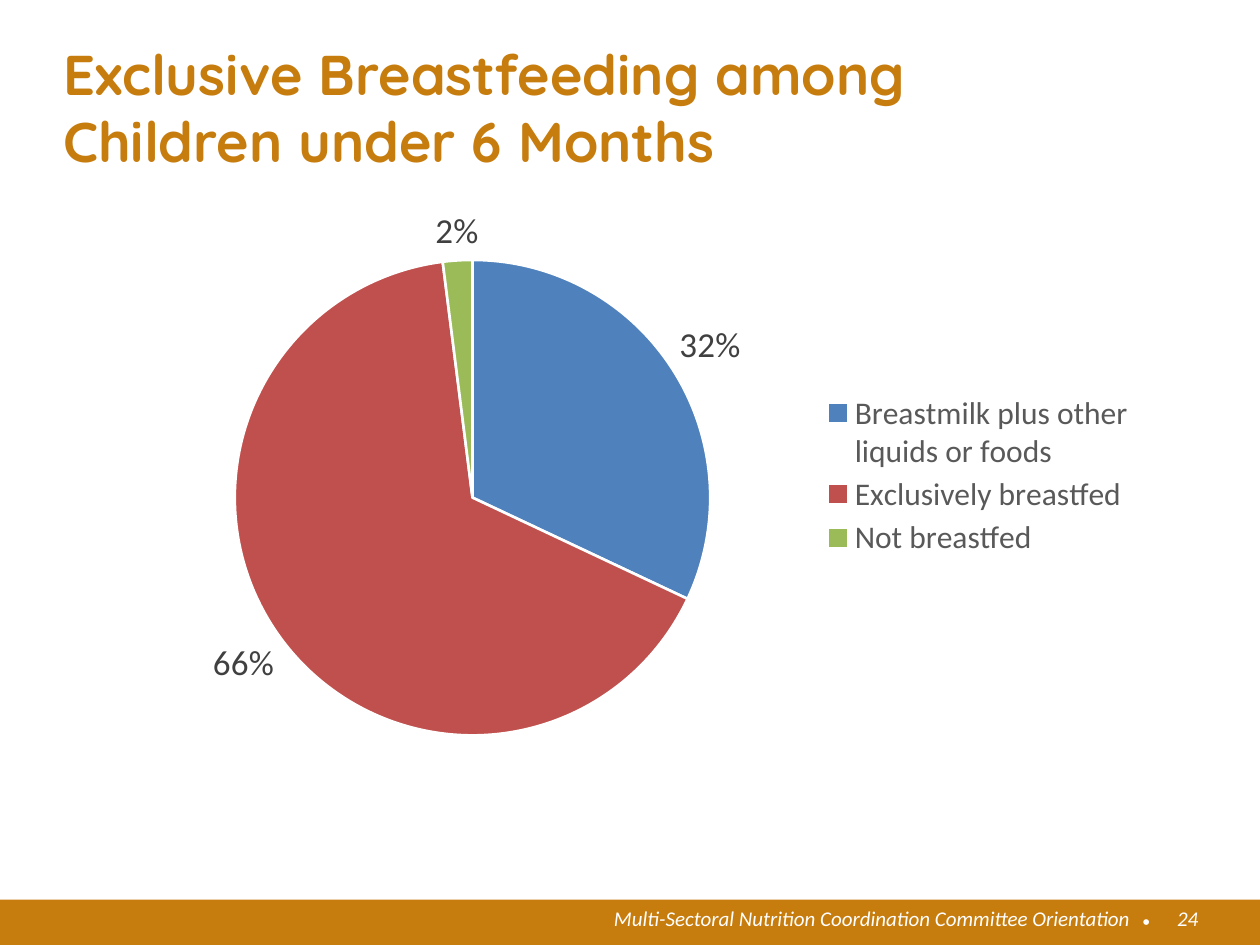
import pptx
import pptx.chart.data
import pptx.dml.color
import pptx.enum.chart
import pptx.enum.shapes
import pptx.enum.text
import pptx.oxml
import pptx.oxml.ns
import pptx.util

Pt = pptx.util.Pt
ALIGN = pptx.enum.text.PP_ALIGN
COLOURS = {
    "ochre": "C77C0E", "white": "FFFFFF", "label": "404040", "legend": "595959",
    "mixed": "4F81BD", "exclusive": "C0504D", "none": "9BBB59",
}
FEEDING = [
    ("Breastmilk plus other liquids or foods", 0.32, "mixed"),
    ("Exclusively breastfed", 0.66, "exclusive"),
    ("Not breastfed", 0.02, "none"),
]


def rgb(name):
    return pptx.dml.color.RGBColor.from_string(COLOURS[name])


def style_font(font, name, size, colour, bold=False, italic=False):
    font.name, font.size = name, Pt(size)
    font.bold, font.italic = bold, italic
    font.color.rgb = rgb(colour)


def fill_frame(frame, text, align, wrap):
    """Put one top-anchored paragraph in a frame without margins."""
    frame.margin_left = frame.margin_right = frame.margin_top = frame.margin_bottom = 0
    frame.auto_size = pptx.enum.text.MSO_AUTO_SIZE.NONE
    frame.vertical_anchor = pptx.enum.text.MSO_ANCHOR.TOP
    frame.word_wrap = wrap
    frame.text = text
    paragraph = frame.paragraphs[0]
    paragraph.alignment = align
    return paragraph


def add_title(page, text):
    title = page.shapes.title
    title.left, title.top, title.width, title.height = Pt(36), Pt(22.3), Pt(648), Pt(57)
    paragraph = fill_frame(title.text_frame, text, ALIGN.LEFT, False)
    style_font(paragraph.font, "Quicksand", 32, "ochre", bold=True)


def set_layout(element, before, left, top, width, height, inner=False):
    """Place a chart part, in fractions of the chart, ahead of its child `before`."""
    for old in element.findall(pptx.oxml.ns.qn("c:layout")):
        element.remove(old)
    target = '<c:layoutTarget val="inner"/>' if inner else ""
    layout = pptx.oxml.parse_xml(
        f'<c:layout {pptx.oxml.ns.nsdecls("c")}><c:manualLayout>{target}'
        '<c:xMode val="edge"/><c:yMode val="edge"/>'
        f'<c:x val="{left}"/><c:y val="{top}"/><c:w val="{width}"/><c:h val="{height}"/>'
        '</c:manualLayout></c:layout>')
    element.find(pptx.oxml.ns.qn(before)).addprevious(layout)


def add_feeding_pie(page):
    data = pptx.chart.data.CategoryChartData(number_format="0%")
    data.categories = [name for name, _, _ in FEEDING]
    data.add_series("Series 1", [share for _, share, _ in FEEDING])
    chart = page.shapes.add_chart(
        pptx.enum.chart.XL_CHART_TYPE.PIE, Pt(76.3), Pt(110.2), Pt(578.2), Pt(319.7), data).chart
    style_font(chart.font, "Calibri", 20, "label")
    chart.has_title = False
    chart.has_legend = True
    chart.legend.position = pptx.enum.chart.XL_LEGEND_POSITION.RIGHT
    chart.legend.include_in_layout = False
    style_font(chart.legend.font, "Calibri", 18, "legend")

    plot = chart.plots[0]
    plot.vary_by_categories = True
    for index, (_, _, colour) in enumerate(FEEDING):
        form = plot.series[0].points[index].format
        form.fill.solid()
        form.fill.fore_color.rgb = rgb(colour)
        form.line.color.rgb = rgb("white")
        form.line.width = Pt(1.5)

    plot.has_data_labels = True
    labels = plot.data_labels
    labels.show_value, labels.show_percentage = True, False
    labels.number_format, labels.number_format_is_linked = "0%", False
    labels.position = pptx.enum.chart.XL_LABEL_POSITION.OUTSIDE_END
    style_font(labels.font, "Calibri", 20, "label")

    plot_area = chart.element.find(".//" + pptx.oxml.ns.qn("c:plotArea"))
    set_layout(plot_area, "c:pieChart", 0.1, 0.12, 0.47, 0.85, inner=True)
    legend = chart.element.find(".//" + pptx.oxml.ns.qn("c:legend"))
    set_layout(legend, "c:overlay", 0.68, 0.35, 0.31, 0.31)


def add_footer_text(page, text, left, top, width, height,
                    align=ALIGN.RIGHT, font="Calibri", italic=True):
    box = page.shapes.add_textbox(Pt(left), Pt(top), Pt(width), Pt(height))
    paragraph = fill_frame(box.text_frame, text, align, True)
    style_font(paragraph.font, font, 12, "white", italic=italic)


def add_footer(page):
    band = page.shapes.add_shape(
        pptx.enum.shapes.MSO_SHAPE.RECTANGLE, 0, Pt(514), Pt(720), Pt(26))
    band.shadow.inherit = False
    band.fill.solid()
    band.fill.fore_color.rgb = rgb("ochre")
    band.line.fill.background()
    add_footer_text(page, "24", 661, 517.7, 23.8, 23)
    add_footer_text(page, "Multi-Sectoral Nutrition Coordination Committee Orientation",
                    348.5, 517.7, 297.4, 29)
    add_footer_text(page, "•", 653, 519, 13, 14.4, ALIGN.LEFT, "Arial", False)


def main():
    deck = pptx.Presentation()
    deck.slide_width, deck.slide_height = Pt(720), Pt(540)
    page = deck.slides.add_slide(deck.slide_layouts[5])
    add_title(page, "Exclusive Breastfeeding among\vChildren under 6 Months")
    add_feeding_pie(page)
    add_footer(page)
    deck.save("out.pptx")


if __name__ == "__main__":
    main()
